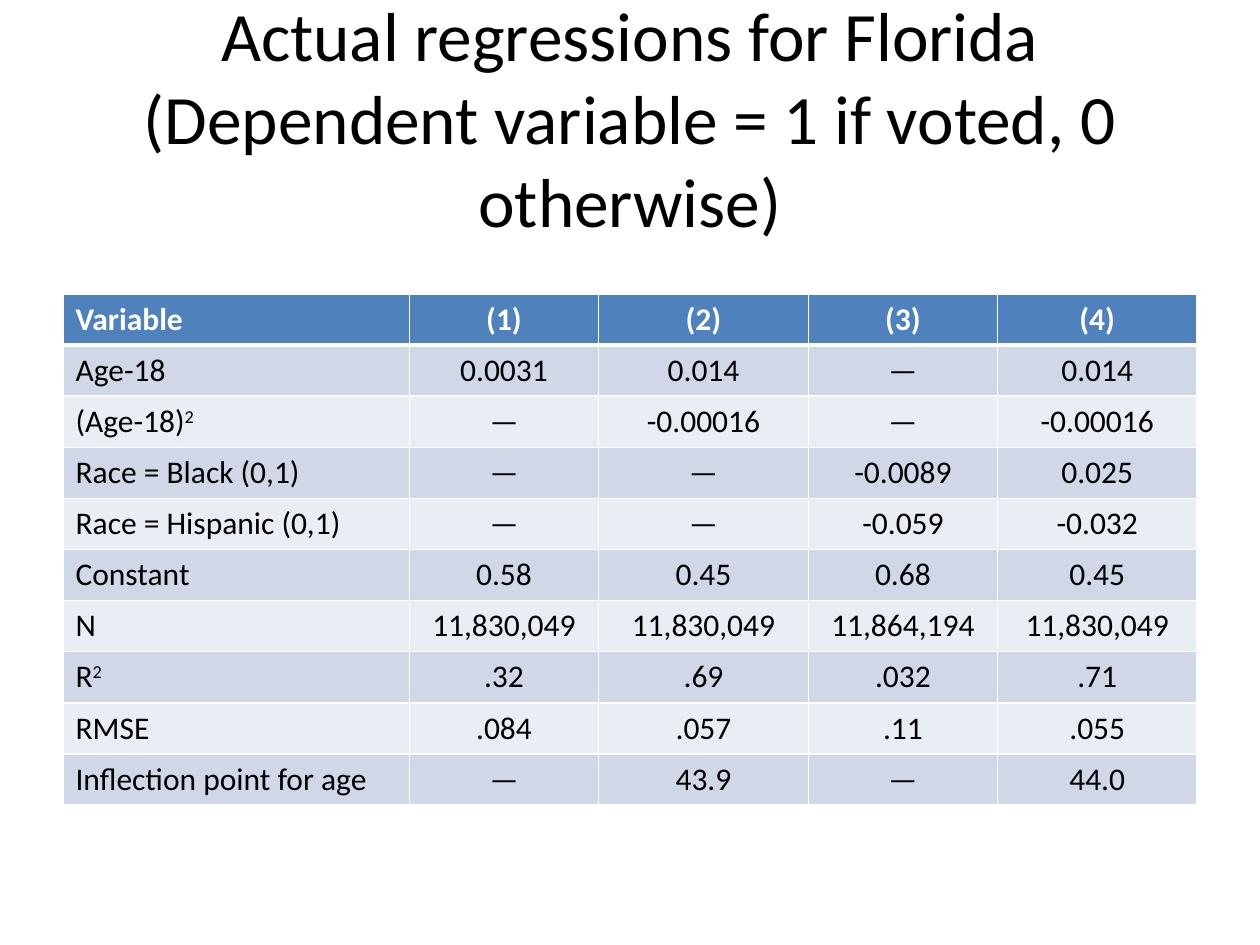
from pptx import Presentation
from pptx.dml.color import RGBColor
from pptx.enum.text import MSO_ANCHOR, MSO_AUTO_SIZE, PP_ALIGN
from pptx.oxml import parse_xml
from pptx.oxml.ns import nsdecls
from pptx.util import Pt

BLACK, WHITE = "000000", "FFFFFF"
HEADER_FILL, BAND_FILLS = "4F81BD", ("D0D8E8", "E9EDF4")
COLUMN_WIDTHS = (198, 108, 120, 108, 114)
ROW_HEIGHT = 29.2
ROWS = [
    ("Variable", "(1)", "(2)", "(3)", "(4)"),
    ("Age-18", "0.0031", "0.014", "—", "0.014"),
    ("(Age-18)^2", "—", "-0.00016", "—", "-0.00016"),
    ("Race = Black (0,1)", "—", "—", "-0.0089", "0.025"),
    ("Race = Hispanic (0,1)", "—", "—", "-0.059", "-0.032"),
    ("Constant", "0.58", "0.45", "0.68", "0.45"),
    ("N", "11,830,049", "11,830,049", "11,864,194", "11,830,049"),
    ("R^2", ".32", ".69", ".032", ".71"),
    ("RMSE", ".084", ".057", ".11", ".055"),
    ("Inflection point for age", "—", "43.9", "—", "44.0"),
]


def format_font(font, color, **values):
    font.color.rgb = RGBColor.from_string(color)
    for name, value in {"name": "Calibri", **values}.items():
        setattr(font, name, value)


def set_borders(cell, widths):
    properties = cell._tc.get_or_add_tcPr()
    for position, (side, width) in enumerate(widths.items()):
        line = parse_xml(
            f'<a:ln{side} {nsdecls("a")} w="{Pt(width)}"><a:solidFill>'
            f'<a:srgbClr val="{WHITE}"/></a:solidFill></a:ln{side}>')
        properties.insert(position, line)


presentation = Presentation()
presentation.slide_width, presentation.slide_height = Pt(720), Pt(540)
slide = presentation.slides.add_slide(presentation.slide_layouts[5])

# Title
title = slide.shapes.title
for name, value in {"left": 36, "top": 21.6, "width": 648, "height": 90}.items():
    setattr(title, name, Pt(value))
frame = title.text_frame
frame.text = "Actual regressions for Florida\v(Dependent variable = 1 if voted, 0 otherwise)"
for name, value in {"word_wrap": True, "auto_size": MSO_AUTO_SIZE.NONE,
                    "vertical_anchor": MSO_ANCHOR.MIDDLE}.items():
    setattr(frame, name, value)
paragraph = frame.paragraphs[0]
paragraph.alignment = PP_ALIGN.CENTER
for run in paragraph.runs:
    format_font(run.font, BLACK, size=Pt(39.6))

# Regression table
table = slide.shapes.add_table(
    len(ROWS), len(COLUMN_WIDTHS), Pt(36), Pt(168),
    Pt(sum(COLUMN_WIDTHS)), Pt(ROW_HEIGHT * len(ROWS))).table
for column, width in zip(table.columns, COLUMN_WIDTHS):
    column.width = Pt(width)

for row_index, values in enumerate(ROWS):
    table.rows[row_index].height = Pt(ROW_HEIGHT)
    is_header = row_index == 0
    fill = HEADER_FILL if is_header else BAND_FILLS[(row_index - 1) % 2]
    for column_index, value in enumerate(values):
        cell = table.cell(row_index, column_index)
        cell.fill.solid()
        cell.fill.fore_color.rgb = RGBColor.from_string(fill)
        set_borders(cell, {"L": 1, "R": 1, "T": 3 if row_index == 1 else 1,
                           "B": 3 if is_header else 1})
        paragraph = cell.text_frame.paragraphs[0]
        paragraph.alignment = PP_ALIGN.CENTER if column_index else PP_ALIGN.LEFT
        # A caret in the data marks a superscript
        for part_index, part in enumerate(value.split("^")):
            run = paragraph.add_run()
            run.text = part
            format_font(run.font, WHITE if is_header else BLACK,
                        size=Pt(18), bold=is_header)
            if part_index:
                run.font._element.set("baseline", "30000")

presentation.save("out.pptx")
